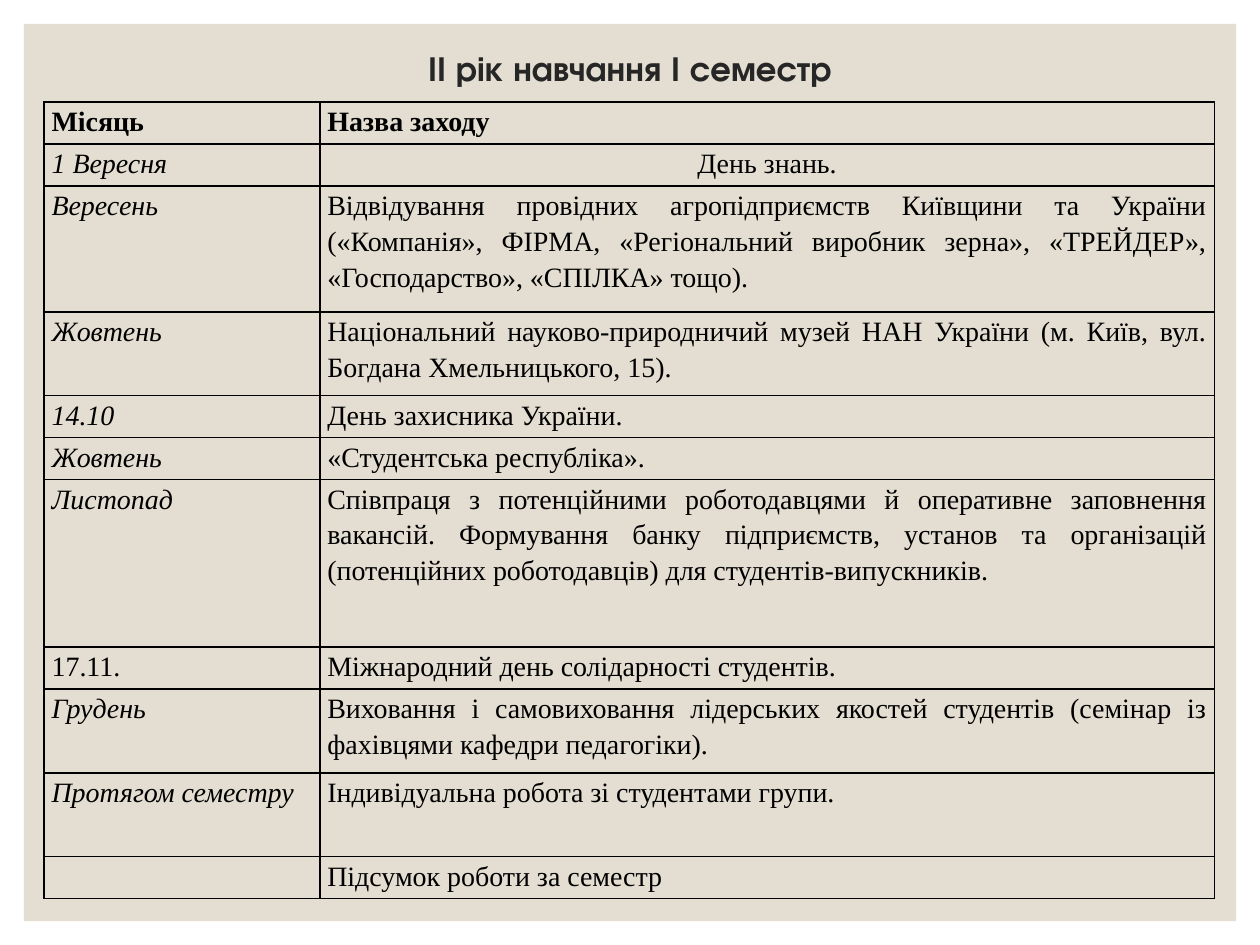
import dataclasses

import pptx
import pptx.dml.color
import pptx.enum.shapes
import pptx.enum.text
import pptx.oxml
import pptx.oxml.ns
import pptx.util

Cm = pptx.util.Cm
Align = pptx.enum.text.PP_ALIGN
Anchor = pptx.enum.text.MSO_ANCHOR


@dataclasses.dataclass(frozen=True)
class Theme:
    panel: str = "E3DED1"
    heading: str = "262626"
    ink: str = "000000"
    heading_font: str = "TeX Gyre Adventor"
    body_font: str = "Times New Roman"
    heading_size: int = 20
    body_size: int = 16
    border_width: int = 1


def rgb(value):
    return pptx.dml.color.RGBColor.from_string(value)


def write(frame, text, *, font, size, color, bold=False, italic=False,
          align=Align.JUSTIFY, spacing=1.0):
    paragraph = frame.paragraphs[0]
    paragraph.alignment = align
    paragraph.line_spacing = spacing
    paragraph.font.size = pptx.util.Pt(size)
    if not text:
        return
    run = paragraph.add_run()
    run.text = text
    run.font.name = font
    run.font.size = pptx.util.Pt(size)
    run.font.color.rgb = rgb(color)
    run.font.bold = bold
    run.font.italic = italic


class SlideBuilder:
    def __init__(self, slide, theme):
        self.slide = slide
        self.theme = theme

    def panel(self, left, top, width, height):
        panel = self.slide.shapes.add_shape(
            pptx.enum.shapes.MSO_SHAPE.RECTANGLE, left, top, width, height)
        panel.shadow.inherit = False
        panel.fill.solid()
        panel.fill.fore_color.rgb = rgb(self.theme.panel)
        panel.line.fill.background()

    def heading(self, text, left, top, width, height):
        frame = self.slide.shapes.add_textbox(left, top, width, height).text_frame
        frame.word_wrap = True
        frame.vertical_anchor = Anchor.MIDDLE
        write(frame, text, font=self.theme.heading_font,
              size=self.theme.heading_size, color=self.theme.heading,
              bold=True, align=Align.CENTER, spacing=0.9)

    def border(self, cell):
        """Outline all four sides; the lines must precede the cell's fill."""
        properties = cell._tc.get_or_add_tcPr()
        width = pptx.util.Pt(self.theme.border_width)
        for position, side in enumerate(("lnL", "lnR", "lnT", "lnB")):
            properties.insert(position, pptx.oxml.parse_xml(
                f'<a:{side} {pptx.oxml.ns.nsdecls("a")} w="{width}">'
                f'<a:solidFill><a:srgbClr val="{self.theme.ink}"/></a:solidFill>'
                f'</a:{side}>'))

    def cell(self, cell, text, **style):
        cell.fill.background()
        cell.margin_left = cell.margin_right = Cm(0.15)
        cell.margin_top = cell.margin_bottom = Cm(0)
        self.border(cell)
        write(cell.text_frame, text, font=self.theme.body_font,
              size=self.theme.body_size, color=self.theme.ink,
              spacing=1.15, **style)

    def schedule(self, rows, left, top, column_widths, row_unit):
        """Each row holds its height in units, two texts and their styles."""
        units = sum(row[0] for row in rows)
        table = self.slide.shapes.add_table(
            len(rows), len(column_widths), left, top,
            sum(column_widths), row_unit * units).table
        table.first_row = table.horz_banding = False
        for column, width in zip(table.columns, column_widths):
            column.width = width
        for row, (height, month, event, month_style, event_style) in zip(table.rows, rows):
            row.height = row_unit * height
            self.cell(row.cells[0], month, **month_style)
            self.cell(row.cells[1], event, **event_style)


PLAIN = {}
BOLD = {"bold": True}
ITALIC = {"italic": True}
CENTERED = {"align": Align.CENTER}

EVENTS = [
    (1, "Місяць", "Назва заходу", BOLD, BOLD),
    (1, "1 Вересня", "День знань.", ITALIC, CENTERED),
    (3, "Вересень",
     "Відвідування провідних агропідприємств Київщини та України "
     "(«Компанія», ФІРМА, «Регіональний виробник зерна», «ТРЕЙДЕР», "
     "«Господарство», «СПІЛКА» тощо).", ITALIC, PLAIN),
    (2, "Жовтень",
     "Національний науково-природничий музей НАН України "
     "(м. Київ, вул. Богдана Хмельницького, 15).", ITALIC, PLAIN),
    (1, "14.10", "День захисника України.", ITALIC, PLAIN),
    (1, "Жовтень", "«Студентська республіка».", ITALIC, PLAIN),
    (4, "Листопад",
     "Співпраця з потенційними роботодавцями й оперативне заповнення "
     "вакансій. Формування банку підприємств, установ та організацій "
     "(потенційних роботодавців) для студентів-випускників.", ITALIC, PLAIN),
    (1, "17.11.", "Міжнародний день солідарності студентів.", PLAIN, PLAIN),
    (2, "Грудень",
     "Виховання і самовиховання лідерських якостей студентів "
     "(семінар із фахівцями кафедри педагогіки).", ITALIC, PLAIN),
    (2, "Протягом семестру", "Індивідуальна робота зі студентами групи.",
     ITALIC, PLAIN),
    (1, "", "Підсумок роботи за семестр", PLAIN, PLAIN),
]


def main():
    presentation = pptx.Presentation()
    presentation.slide_width = Cm(25.4)
    presentation.slide_height = Cm(19.05)
    slide = presentation.slides.add_slide(presentation.slide_layouts[6])
    builder = SlideBuilder(slide, Theme())
    builder.panel(Cm(0.48), Cm(0.48), Cm(24.44), Cm(18.09))
    builder.heading("ІІ рік навчання І семестр",
                    Cm(2.03), Cm(0.74), Cm(21.34), Cm(1.35))
    builder.schedule(EVENTS, Cm(0.89), Cm(2.06),
                     (Cm(5.56), Cm(18.03)), Cm(0.845))
    presentation.save("out.pptx")


if __name__ == "__main__":
    main()
